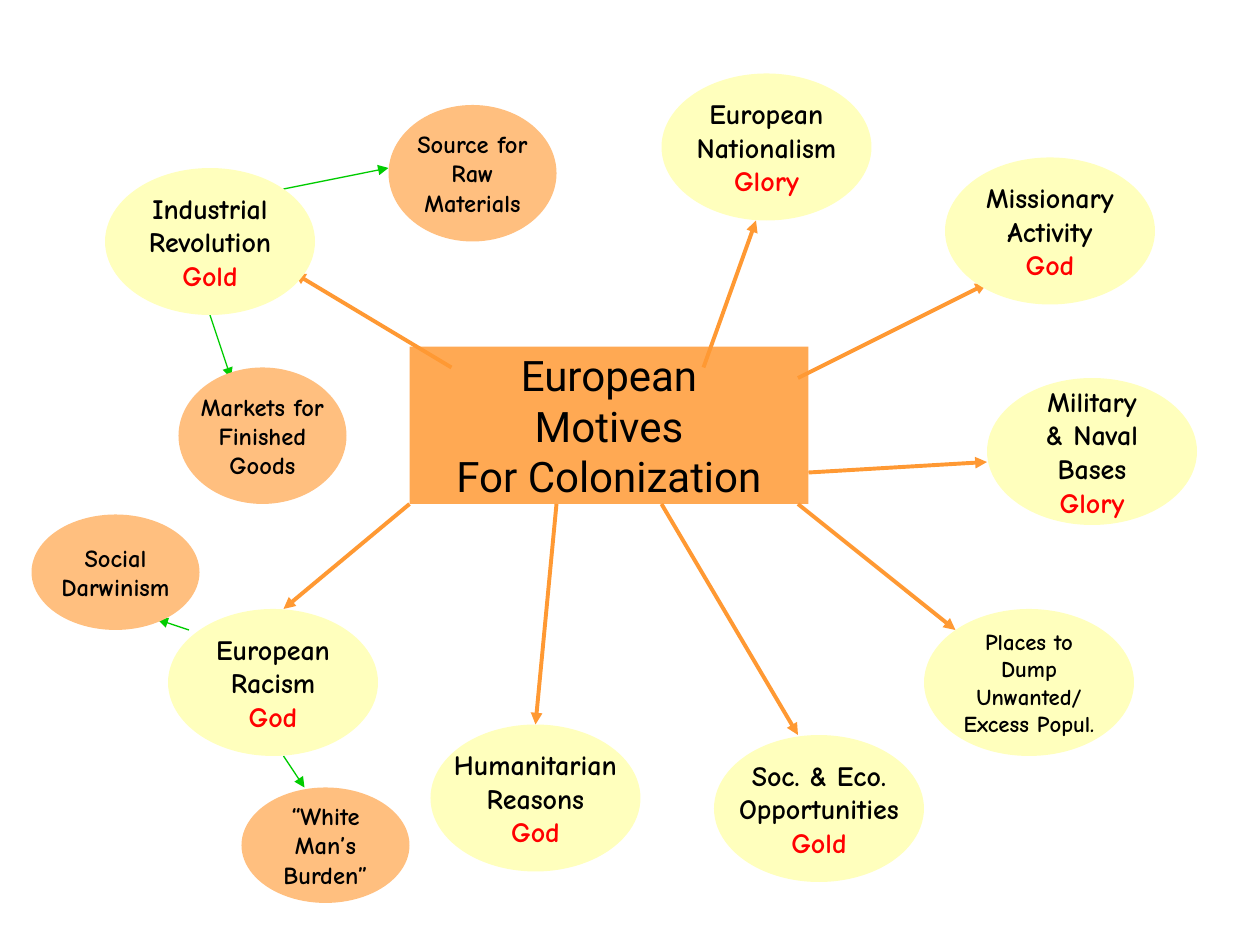
from lxml import etree
from pptx import Presentation
from pptx import util as u
from pptx.dml.color import RGBColor
from pptx.enum import shapes, text
from pptx.oxml.ns import qn

ORANGE, GREEN, YELLOW, PEACH = "FF9933", "00CC00", "FFFFBD", "FFBF7F"
BLACK, RED = "000000", "FF0000"
STEP = 2.54 / 12  # everything sits on a grid of twelfths of an inch

# label, left, top, text size, arrow from, arrow to (grid steps);
# "\v" breaks a line, "\n" starts a paragraph
motives = [
    ("Industrial\nRevolution\nGold", 10, 16, 16, (43, 35), (28, 26)),
    ("European\vNationalism\nGlory", 63, 7, 16, (67, 35), (72, 21)),
    ("Missionary\vActivity\nGod", 90, 15, 16, (76, 36), (94, 27)),
    ("Military\v& Naval\vBases\nGlory", 94, 36, 16, (77, 45), (94, 44)),
    ("Places to\vDump\vUnwanted/\vExcess Popul.", 88, 58, 13, (76, 48), (91, 60)),
    ("Soc. & Eco.\vOpportunities\nGold", 68, 70, 16, (63, 48), (76, 70)),
    ("Humanitarian\vReasons\nGod", 41, 69, 16, (53, 48), (51, 69)),
    ("European\vRacism\nGod", 16, 58, 16, (39, 48), (27, 58)),
]
# label, left, top, height, arrow from, arrow to
details = [
    ("Source for\nRaw\nMaterials", 37, 10, 13, (27, 18), (37, 16)),
    ("Markets for\vFinished\vGoods", 17, 35, 13, (20, 30), (22, 36)),
    ("“White\vMan’s\vBurden”", 23, 75, 11, (27, 72), (29, 75)),
    ("Social\vDarwinism", 3, 49, 11, (18, 60), (15, 59)),
]


def rgb(value):
    return RGBColor.from_string(value)


def fill_box(box, place, color, label, font, size, bold):
    """Place a shape on the grid, fill it and write its centred label."""
    box.left, box.top, box.width, box.height = [u.Cm(n * STEP) for n in place]
    box.fill.solid()
    box.fill.fore_color.rgb = rgb(color)
    box.line.fill.background()
    frame = box.text_frame
    frame.text = label
    frame.word_wrap = False
    frame.auto_size = text.MSO_AUTO_SIZE.NONE
    frame.vertical_anchor = text.MSO_ANCHOR.MIDDLE
    for para in frame.paragraphs:
        para.alignment = text.PP_ALIGN.CENTER
        for span in para.runs:
            span.font.name, span.font.size, span.font.bold = font, u.Pt(size), bold
            reason = span.text in ("God", "Gold", "Glory")
            span.font.color.rgb = rgb(RED if reason else BLACK)


deck = Presentation()
deck.slide_width, deck.slide_height = u.Cm(25.4), u.Cm(19.05)
page = deck.slides.add_slide(deck.slide_layouts[5])

# Arrows
arrows = [(start, end, ORANGE, 2.25) for *_, start, end in motives]
arrows += [(start, end, GREEN, 0.75) for *_, start, end in details]
for start, end, color, width in arrows:
    arrow = page.shapes.add_connector(
        shapes.MSO_CONNECTOR.STRAIGHT, *[u.Cm(n * STEP) for n in start + end])
    arrow.line.color.rgb = rgb(color)
    arrow.line.width = u.Pt(width)
    etree.SubElement(arrow.line._get_or_add_ln(), qn("a:tailEnd"), type="triangle")
    etree.SubElement(arrow.element.spPr, qn("a:effectLst"))

# Central topic, slightly transparent and in front of the arrows
title = page.shapes.title
fill_box(title, (39, 33, 38, 15), ORANGE,
         "European\nMotives\nFor Colonization", "Roboto", 24, False)
tint = title.element.spPr.find(".//" + qn("a:srgbClr"))
etree.SubElement(tint, qn("a:alpha"), val="84000")
title.element.getparent().append(title.element)

# Motives and their details
bubbles = [(label, (left, top, 20, 14), YELLOW, size)
           for label, left, top, size, *_ in motives]
bubbles += [(label, (left, top, 16, height), PEACH, 14)
            for label, left, top, height, *_ in details]
for label, place, color, size in bubbles:
    bubble = page.shapes.add_shape(shapes.MSO_SHAPE.OVAL, 0, 0, 0, 0)
    bubble.shadow.inherit = False
    fill_box(bubble, place, color, label, "Comic Neue", size, True)

deck.save("out.pptx")
